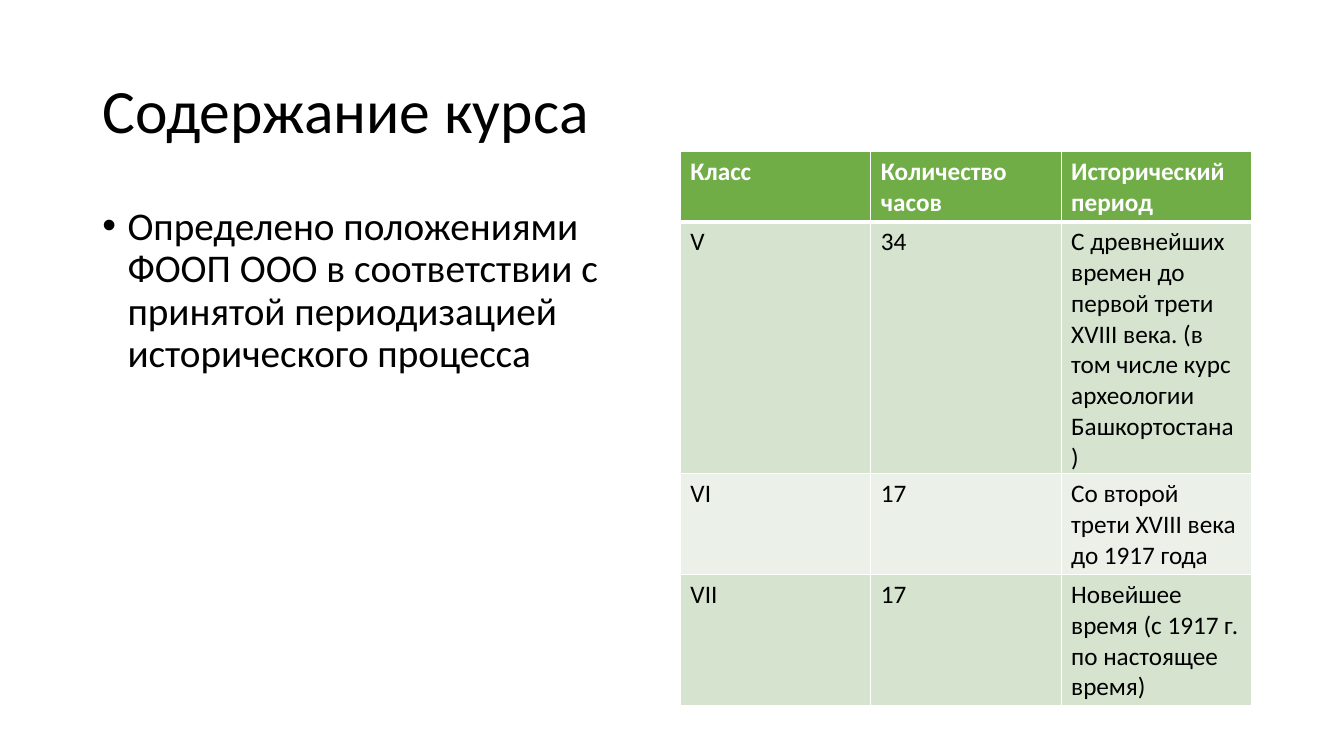
import pptx
import pptx.dml.color
import pptx.enum.text
import pptx.oxml
import pptx.oxml.ns
import pptx.util

Pt = pptx.util.Pt
RGBColor = pptx.dml.color.RGBColor
MSO_ANCHOR = pptx.enum.text.MSO_ANCHOR

FONT = "Calibri"
BLACK = RGBColor(0x00, 0x00, 0x00)
WHITE = RGBColor(0xFF, 0xFF, 0xFF)
GREEN = RGBColor(0x70, 0xAD, 0x47)
BAND_DARK = RGBColor(0xD5, 0xE3, 0xCF)
BAND_LIGHT = RGBColor(0xEB, 0xF1, 0xE9)

COURSE_ROWS = [
    ("Класс", "Количество часов", "Исторический период"),
    ("V", "34", "С древнейших времен до первой трети XVIII века. "
                "(в том числе курс археологии Башкортостана)"),
    ("VI", "17", "Со второй трети XVIII века до 1917 года"),
    ("VII", "17", "Новейшее время (с 1917 г. по настоящее время)"),
]


def add_run(p, text, size, color=BLACK, bold=False):
    r = p.add_run()
    r.text = text
    r.font.name = FONT
    r.font.size = Pt(size)
    r.font.bold = bold
    r.font.color.rgb = color


def add_title(s, text):
    sp = s.shapes.title
    sp.left, sp.top, sp.width, sp.height = Pt(66), Pt(28.8), Pt(828), Pt(104.4)
    tf = sp.text_frame
    tf.word_wrap = True
    tf.vertical_anchor = MSO_ANCHOR.MIDDLE
    p = tf.paragraphs[0]
    p.alignment = pptx.enum.text.PP_ALIGN.LEFT
    p.line_spacing = 0.9
    add_run(p, text, 44)


def add_bullet_text(s, text):
    sp = s.shapes.add_textbox(Pt(66), Pt(144), Pt(408), Pt(342.6))
    tf = sp.text_frame
    tf.word_wrap = True
    p = tf.paragraphs[0]
    pPr = p._p.get_or_add_pPr()
    pPr.set("marL", str(Pt(18)))
    pPr.set("indent", str(-Pt(18)))
    ns = pptx.oxml.ns.nsdecls("a")
    pPr.append(pptx.oxml.parse_xml(f'<a:buFont {ns} typeface="Arial"/>'))
    pPr.append(pptx.oxml.parse_xml(f'<a:buChar {ns} char="•"/>'))
    p.line_spacing = 0.9
    add_run(p, text, 28)


def set_borders(cell, top, bottom):
    tcPr = cell._tc.get_or_add_tcPr()
    ns = pptx.oxml.ns.nsdecls("a")
    for side, width in (("L", 1), ("R", 1), ("T", top), ("B", bottom)):
        tcPr.append(pptx.oxml.parse_xml(
            f'<a:ln{side} {ns} w="{Pt(width)}"><a:solidFill>'
            f'<a:srgbClr val="{WHITE}"/></a:solidFill></a:ln{side}>'))


def add_course_table(s, rows):
    frame = s.shapes.add_table(len(rows), len(rows[0]),
                               Pt(486), Pt(108), Pt(408), Pt(396))
    table = frame.table
    for i, texts in enumerate(rows):
        table.rows[i].height = Pt(29.2)
        header = i == 0
        fill = GREEN if header else (BAND_LIGHT, BAND_DARK)[i % 2]
        for j, text in enumerate(texts):
            cell = table.cell(i, j)
            # Heavier rule between the header and the first class
            set_borders(cell, 3 if i == 1 else 1, 3 if header else 1)
            cell.fill.solid()
            cell.fill.fore_color.rgb = fill
            add_run(cell.text_frame.paragraphs[0], text, 18,
                    WHITE if header else BLACK, header)
    # Rows grow with their text to fill the frame
    frame.height = Pt(396)


def main():
    prs = pptx.Presentation()
    prs.slide_width, prs.slide_height = Pt(960), Pt(540)
    s = prs.slides.add_slide(prs.slide_layouts[5])

    # Heading and introduction
    add_title(s, "Содержание курса")
    add_bullet_text(s, "Определено положениями ФООП ООО в соответствии с "
                       "принятой периодизацией исторического процесса")

    # Hours and periods by class
    add_course_table(s, COURSE_ROWS)

    prs.save("out.pptx")


if __name__ == "__main__":
    main()
